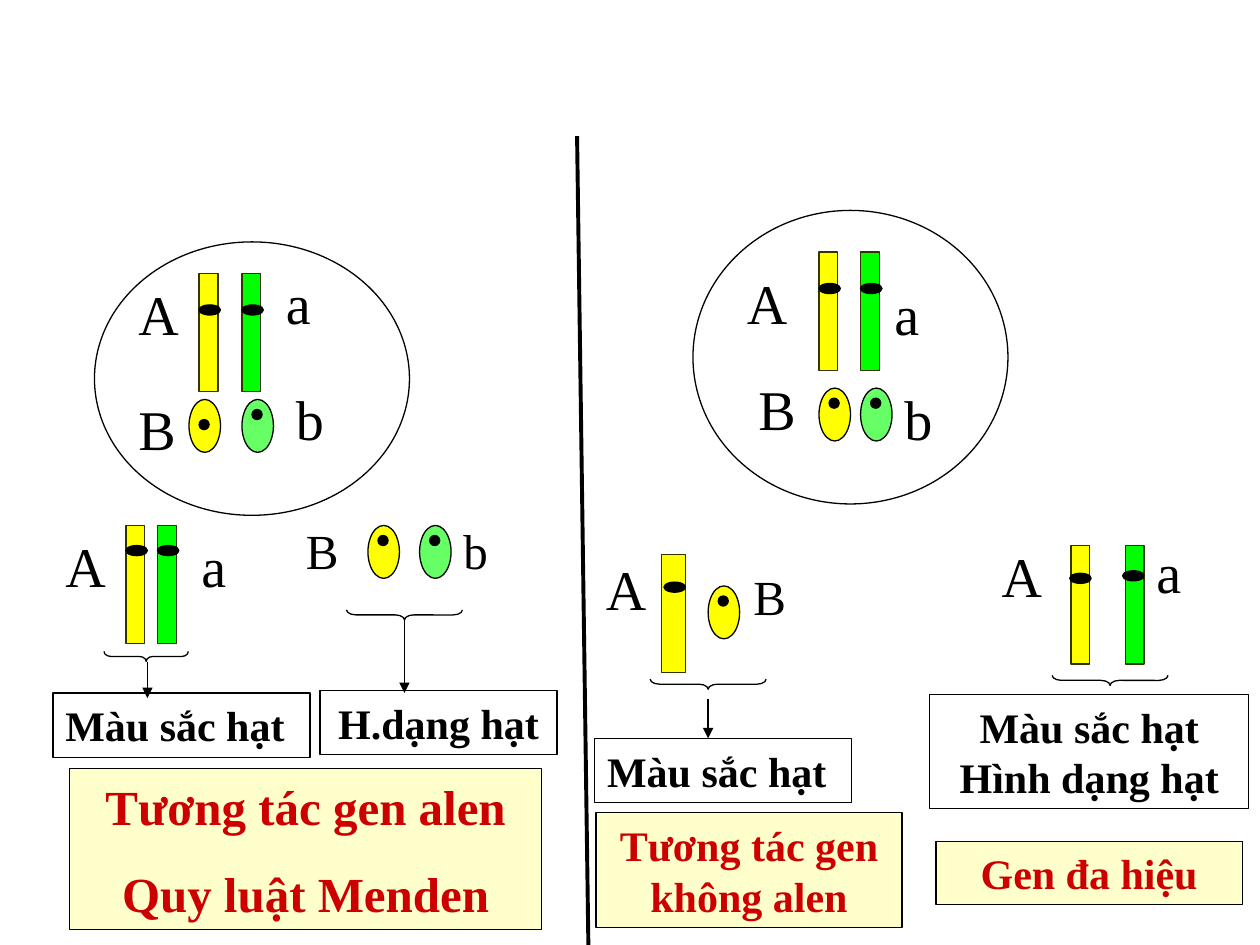
"""Build a slide comparing allelic, non-allelic and pleiotropic gene action."""
from dataclasses import dataclass

from lxml.etree import SubElement
from pptx import Presentation
from pptx.dml.color import RGBColor
from pptx.enum.shapes import MSO_CONNECTOR, MSO_SHAPE
from pptx.enum.text import MSO_AUTO_SIZE, PP_ALIGN
from pptx.oxml.ns import qn
from pptx.shapes.autoshape import Shape
from pptx.slide import Slide
from pptx.util import Inches, Pt

FONT = "Times New Roman"
BLACK, WHITE, RED, CREAM = "000000", "FFFFFF", "CC0000", "FFFFCC"
YELLOW, GREEN, LIGHT_GREEN, OLIVE = "FFFF00", "00FF00", "66FF66", "333300"


@dataclass
class Chromosome:
    left: float
    top: float
    fill: str
    centromere_drop: float = 0.25
    centromere_shift: float = 0
    width: float = 0.15


@dataclass
class Seed:
    left: float
    top: float
    fill: str
    dot_drop: float = 0.08


@dataclass
class Label:
    text: str
    left: float
    top: float
    size: int = 32


@dataclass
class Brace:
    center: float
    middle: float
    span: float = 0.92


@dataclass
class Line:
    start: tuple[float, float]
    end: tuple[float, float]
    weight: float = 0.75
    arrow: bool = True


@dataclass
class Caption:
    lines: list[str]
    left: float
    top: float
    width: float
    height: float
    fill: str = WHITE
    color: str = BLACK
    size: int = 24
    align: PP_ALIGN = PP_ALIGN.CENTER
    gap: int = 0


DIVIDER = Line((4.58, 1.08), (4.67, 7.5), 2.25, False)
CELLS = [(0.75, 1.92, 2.5, 2.17), (5.5, 1.67, 2.5, 2.33)]
CHROMOSOMES = [
    Chromosome(1.58, 2.17, YELLOW), Chromosome(1.92, 2.17, GREEN),
    Chromosome(1, 4.17, YELLOW, 0.16), Chromosome(1.25, 4.17, GREEN, 0.16),
    Chromosome(6.5, 2, YELLOW), Chromosome(6.83, 2, GREEN),
    Chromosome(5.25, 4.4, YELLOW, 0.22, 0.02, 0.19),
    Chromosome(8.5, 4.33, YELLOW, 0.22, -0.01),
    Chromosome(8.93, 4.33, GREEN, 0.2, -0.02),
]
SEEDS = [
    Seed(1.5, 3.17, YELLOW, 0.16), Seed(1.92, 3.17, LIGHT_GREEN),
    Seed(2.92, 4.17, YELLOW), Seed(3.33, 4.17, LIGHT_GREEN),
    Seed(6.5, 3.08, YELLOW), Seed(6.83, 3.08, LIGHT_GREEN),
    Seed(5.62, 4.65, YELLOW),
]
LABELS = [
    Label("A", 1, 2.17), Label("a", 2.17, 2.08),
    Label("B", 1, 3.08), Label("b", 2.25, 3),
    Label("A", 0.42, 4.17), Label("a", 1.5, 4.17),
    Label("B", 2.33, 4.08, 28), Label("b", 3.58, 4.08, 28),
    Label("A", 5.83, 2.08), Label("a", 7, 2.17),
    Label("B", 5.92, 2.92), Label("b", 7.08, 3),
    Label("A", 4.71, 4.35), Label("B", 5.88, 4.45, 28),
    Label("A", 7.85, 4.25), Label("a", 9.08, 4.22),
]
BRACES = [Brace(1.16, 5.21, 0.67), Brace(3.21, 4.88), Brace(5.62, 5.43), Brace(8.81, 5.4)]
ARROWS = [
    Line((1.17, 5.25), (1.17, 5.54)),
    Line((3.21, 4.92), (3.21, 5.5)),
    Line((5.62, 5.55), (5.62, 5.86)),
]
CAPTIONS = [
    Caption(["Màu sắc hạt"], 0.42, 5.5, 2.04, 0.51, align=PP_ALIGN.LEFT),
    Caption(["H.dạng hạt"], 2.54, 5.48, 1.88, 0.51),
    Caption(["Màu sắc hạt"], 4.72, 5.86, 2.04, 0.51, align=PP_ALIGN.LEFT),
    Caption(["Màu sắc hạt", "Hình dạng hạt"], 7.38, 5.51, 2.53, 0.91),
    Caption(["Tương tác gen alen", "Quy luật Menden"], 0.55, 6.1, 3.75, 1.28,
            CREAM, RED, 28, gap=16),
    Caption(["Tương tác gen không alen"], 4.73, 6.45, 2.43, 0.91, CREAM, RED),
    Caption(["Gen đa hiệu"], 7.43, 6.68, 2.43, 0.5, CREAM, RED),
]


def rgb(color: str) -> RGBColor:
    return RGBColor.from_string(color)


def draw_shape(slide: Slide, kind: MSO_SHAPE, left: float, top: float, width: float,
               height: float, fill: str | None, line: str = BLACK) -> Shape:
    shape = slide.shapes.add_shape(
        kind, Inches(left), Inches(top), Inches(width), Inches(height))
    shape.shadow.inherit = False
    if fill:
        shape.fill.solid()
        shape.fill.fore_color.rgb = rgb(fill)
    else:
        shape.fill.background()
    shape.line.color.rgb = rgb(line)
    shape.line.width = Pt(0.75)
    return shape


def write_text(shape: Shape, lines: list[str], size: int, color: str = BLACK,
               bold: bool = False, align: PP_ALIGN = PP_ALIGN.LEFT, gap: int = 0) -> None:
    frame = shape.text_frame
    frame.text = "\n".join(lines)
    frame.word_wrap = True
    frame.auto_size = MSO_AUTO_SIZE.SHAPE_TO_FIT_TEXT
    for index, paragraph in enumerate(frame.paragraphs):
        paragraph.alignment = align
        if index and gap:
            paragraph.space_before = Pt(gap)
        for run in paragraph.runs:
            run.font.name = FONT
            run.font.size = Pt(size)
            run.font.bold = bold
            run.font.color.rgb = rgb(color)


def draw_chromosome(slide: Slide, item: Chromosome) -> None:
    draw_shape(slide, MSO_SHAPE.RECTANGLE, item.left, item.top, item.width, 0.94,
               item.fill, OLIVE)
    draw_shape(slide, MSO_SHAPE.OVAL, item.left + item.centromere_shift,
               item.top + item.centromere_drop, 0.17, 0.08, BLACK)


def draw_seed(slide: Slide, item: Seed) -> None:
    draw_shape(slide, MSO_SHAPE.OVAL, item.left, item.top, 0.25, 0.42, item.fill)
    draw_shape(slide, MSO_SHAPE.OVAL, item.left + 0.08, item.top + item.dot_drop,
               0.08, 0.08, BLACK)


def draw_label(slide: Slide, item: Label) -> None:
    height = 0.63 if item.size == 32 else 0.57
    box = slide.shapes.add_textbox(
        Inches(item.left), Inches(item.top), Inches(0.58), Inches(height))
    write_text(box, [item.text], item.size)


def draw_brace(slide: Slide, item: Brace) -> None:
    brace = draw_shape(slide, MSO_SHAPE.RIGHT_BRACE, item.center - 0.04,
                       item.middle - item.span / 2, 0.08, item.span, None)
    brace.adjustments[0] = item.span
    brace.rotation = 90


def draw_line(slide: Slide, item: Line) -> None:
    points = [Inches(value) for value in (*item.start, *item.end)]
    connector = slide.shapes.add_connector(MSO_CONNECTOR.STRAIGHT, *points)
    connector.line.color.rgb = rgb(BLACK)
    connector.line.width = Pt(item.weight)
    if item.arrow:
        SubElement(connector.line._get_or_add_ln(), qn("a:tailEnd"), type="triangle")
    SubElement(connector._element.spPr, qn("a:effectLst"))


def draw_caption(slide: Slide, item: Caption) -> None:
    box = draw_shape(slide, MSO_SHAPE.RECTANGLE, item.left, item.top, item.width,
                     item.height, item.fill)
    write_text(box, item.lines, item.size, item.color, True, item.align, item.gap)


def main() -> None:
    presentation = Presentation()
    presentation.slide_width, presentation.slide_height = Inches(10), Inches(7.5)
    slide = presentation.slides.add_slide(presentation.slide_layouts[6])
    draw_line(slide, DIVIDER)
    for cell in CELLS:
        draw_shape(slide, MSO_SHAPE.OVAL, *cell, WHITE)
    for draw, items in ((draw_chromosome, CHROMOSOMES), (draw_seed, SEEDS),
                        (draw_label, LABELS), (draw_brace, BRACES),
                        (draw_caption, CAPTIONS), (draw_line, ARROWS)):
        for item in items:
            draw(slide, item)
    presentation.save("out.pptx")


if __name__ == "__main__":
    main()
